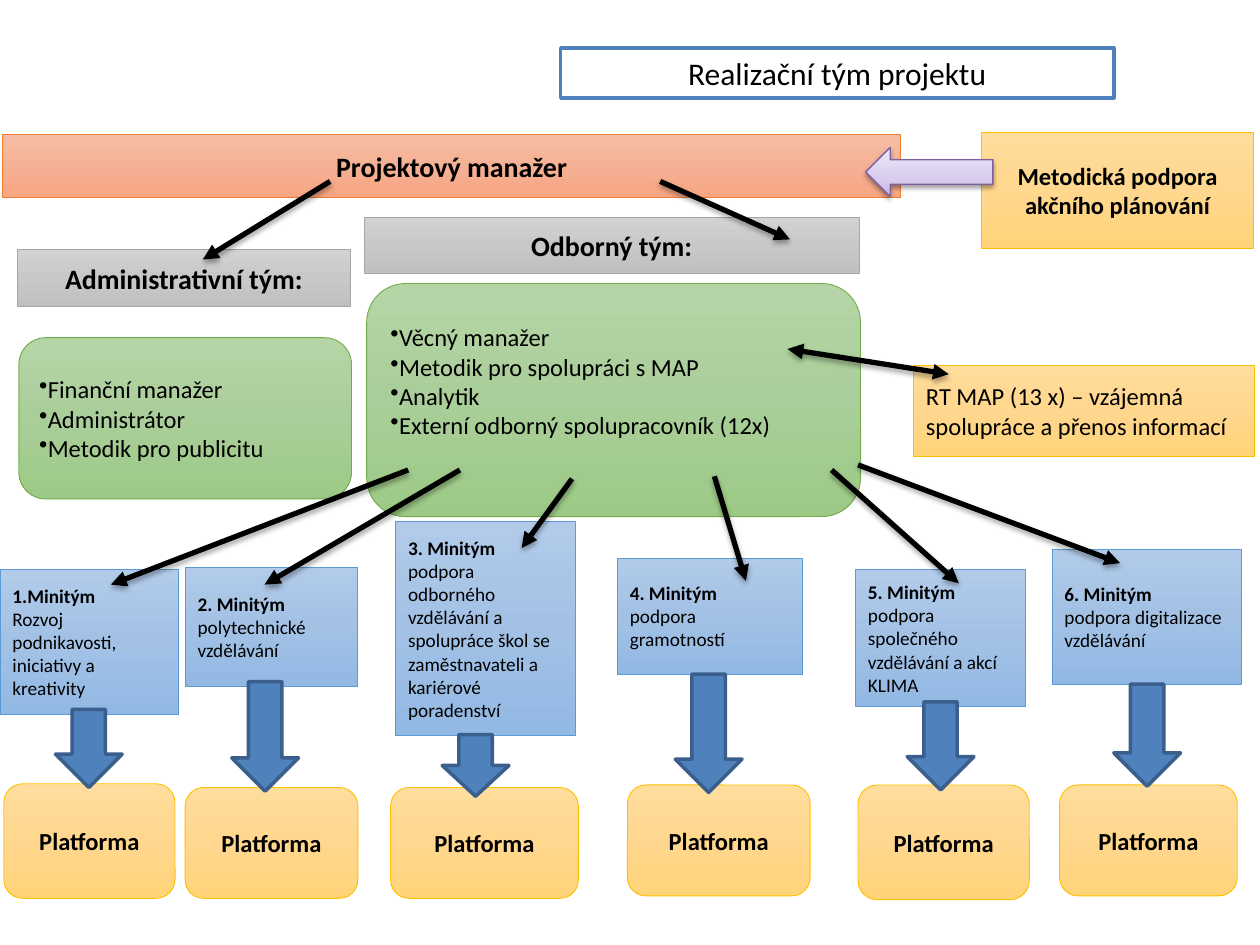
from dataclasses import dataclass
from typing import NamedTuple

from lxml.etree import SubElement
from pptx import Presentation
from pptx.dml.color import RGBColor
from pptx.enum.shapes import MSO_CONNECTOR, MSO_SHAPE as Preset
from pptx.enum.text import MSO_ANCHOR, PP_ALIGN as Align
from pptx.oxml.ns import qn
from pptx.util import Inches, Pt


class Paint(NamedTuple):
    stops: dict
    line: str
    width: float = 0.5
    angle: int = 90


@dataclass(frozen=True)
class Theme:
    font: str = "Calibri"
    ink: str = "000000"
    title: int = 18
    heading: int = 16
    body: int = 14
    small: int = 11
    orange: Paint = Paint({0: "F7BDA4", 50: "F5B195", 100: "F8A581"}, "ED7D31")
    green: Paint = Paint({0: "B5D5A7", 50: "AACE99", 100: "9CCA86"}, "70AD47")
    grey: Paint = Paint({0: "D2D2D2", 50: "C8C8C8", 100: "C0C0C0"}, "A5A5A5")
    gold: Paint = Paint({0: "FFDD9C", 50: "FFD78E", 100: "FFD479"}, "FFC000")
    sky: Paint = Paint({0: "B1CBE9", 50: "A3C1E5", 100: "92B9E4"}, "5B9BD5")
    purple: Paint = Paint({0: "C9B5E8", 35: "D8CBEE", 100: "F0EAF9"}, "7D60A0", 0.75, 270)
    blue: Paint = Paint({0: "4F81BD"}, "3A5F8C", 2)
    white: Paint = Paint({0: "FFFFFF"}, "4F81BD", 2)


class Team(NamedTuple):
    """Places of one small team, its platform and the arrows between them."""
    name: str
    topic: str
    box: tuple
    link: tuple
    platform: tuple
    arrow: tuple  # left, top, height


THEME = Theme()
COLUMNS, ROWS = 100, 75
CELL = Inches(0.1)
ARROW_WIDTH = 5.3

TEAMS = [
    Team("1.Minitým", "Rozvoj podnikavosti, iniciativy a kreativity",
         (0, 45.2, 14.2, 11.5), (32.4, 37.3, 8.8, 46.4),
         (0.3, 62.2, 13.6, 9.1), (4.4, 56.3, 6.2)),
    Team("2. Minitým", "polytechnické vzdělávání",
         (14.7, 45, 13.7, 9.5), (36.5, 37.3, 21, 46.4),
         (14.7, 62.5, 13.7, 8.8), (18.4, 54.1, 8.7)),
    Team("3. Minitým", "podpora odborného vzdělávání a spolupráce škol se "
         "zaměstnavateli a kariérové poradenství",
         (31.4, 41.4, 14.3, 17), (45.4, 38, 41.4, 43.5),
         (31, 62.5, 14.9, 8.8), (35.1, 58.3, 4.9)),
    Team("4. Minitým", "podpora gramotností",
         (49, 44.3, 14.7, 9.2), (56.7, 37.8, 59.2, 46.1),
         (49.8, 62.3, 14.5, 8.8), (53.6, 53.5, 9.4)),
    Team("5. Minitým", "podpora společného vzdělávání a akcí KLIMA",
         (67.9, 45.2, 13.5, 10.9), (66, 37.3, 76.1, 46.3),
         (68.1, 62.3, 13.6, 9.1), (72, 55.7, 7)),
    Team("6. Minitým", "podpora digitalizace vzdělávání",
         (83.5, 43.6, 15, 10.7), (68.1, 36.9, 88.9, 44.7),
         (84.1, 62.3, 14.1, 8.8), (88.4, 54.3, 8.1)),
]


def grid(places):
    return [round(place * CELL) for place in places]


def color(value):
    return RGBColor.from_string(value)


def fill_gradient(shape, paint):
    shape.fill.background()
    properties = shape._element.spPr
    gradient = SubElement(properties, qn("a:gradFill"), rotWithShape="1")
    stops = SubElement(gradient, qn("a:gsLst"))
    for position, value in paint.stops.items():
        stop = SubElement(stops, qn("a:gs"), pos=str(position * 1000))
        SubElement(stop, qn("a:srgbClr"), val=value)
    SubElement(gradient, qn("a:lin"), ang=str(paint.angle * 60000), scaled="0")
    properties.replace(properties.find(qn("a:noFill")), gradient)


def add_shadow(properties, opacity, distance):
    effects = properties.find(qn("a:effectLst"))
    if effects is None:
        effects = SubElement(properties, qn("a:effectLst"))
    shadow = SubElement(effects, qn("a:outerShdw"), blurRad=str(Pt(3.1)),
                        dist=str(Pt(distance)), dir="5400000", rotWithShape="0")
    tint = SubElement(shadow, qn("a:srgbClr"), val=THEME.ink)
    SubElement(tint, qn("a:alpha"), val=str(opacity * 1000))


def add_block(slide, preset, place, paint):
    shape = slide.shapes.add_shape(preset, *grid(place))
    shape.shadow.inherit = False
    if len(paint.stops) > 1:
        fill_gradient(shape, paint)
    else:
        shape.fill.solid()
        shape.fill.fore_color.rgb = color(paint.stops[0])
    shape.line.color.rgb = color(paint.line)
    shape.line.width = Pt(paint.width)
    return shape


def write(shape, lines, size, align=Align.LEFT, bold=(), bullet=False):
    """Write one paragraph per line; bold holds the indexes of bold lines."""
    frame = shape.text_frame
    frame.word_wrap = True
    frame.vertical_anchor = MSO_ANCHOR.MIDDLE
    for index, line in enumerate(lines):
        paragraph = frame.add_paragraph() if index else frame.paragraphs[0]
        paragraph.alignment = align
        if bullet:
            SubElement(paragraph._p.get_or_add_pPr(), qn("a:buChar"), char="•")
        run = paragraph.add_run()
        run.text = line
        formats = {"name": THEME.font, "size": Pt(size), "bold": index in bold}
        for name, value in formats.items():
            setattr(run.font, name, value)
        run.font.color.rgb = color(THEME.ink)


def add_label(slide, place, paint, text, size, preset=Preset.RECTANGLE, bold=(0,)):
    write(add_block(slide, preset, place, paint), [text], size, Align.CENTER, bold)


def add_list(slide, place, lines, bottom=0.05):
    shape = add_block(slide, Preset.ROUNDED_RECTANGLE, place, THEME.green)
    shape.text_frame.margin_bottom = Inches(bottom)
    write(shape, lines, THEME.body, bullet=True)


def add_link(slide, ends, both_ways=False):
    link = slide.shapes.add_connector(MSO_CONNECTOR.STRAIGHT, *grid(ends))
    link.line.color.rgb = color(THEME.ink)
    link.line.width = Pt(3)
    line = link.line._get_or_add_ln()
    if both_ways:
        SubElement(line, qn("a:headEnd"), type="triangle")
    SubElement(line, qn("a:tailEnd"), type="triangle")
    add_shadow(link._element.spPr, 35, 1.8)


def add_management(slide):
    add_label(slide, (0.2, 10.7, 71.3, 5), THEME.orange, "Projektový manažer", THEME.heading)
    add_list(slide, (1.5, 26.8, 26.4, 12.8),
             ["Finanční manažer", "Administrátor", "Metodik pro publicitu"])
    add_label(slide, (1.4, 19.8, 26.4, 4.5), THEME.grey, "Administrativní tým:", THEME.heading)
    add_label(slide, (28.9, 17.3, 39.3, 4.4), THEME.grey, "Odborný tým:", THEME.heading)
    add_list(slide, (29.1, 22.5, 39.2, 18.5),
             ["Věcný manažer", "Metodik pro spolupráci s MAP", "Analytik",
              "Externí odborný spolupracovník (12x)"], bottom=0.35)
    partner = add_block(slide, Preset.RECTANGLE, (72.5, 29, 27.1, 7.2), THEME.gold)
    write(partner, ["RT MAP (13 x) – vzájemná spolupráce a přenos informací"], THEME.body)
    add_link(slide, (62.5, 27.7, 75.3, 29.7), both_ways=True)
    add_link(slide, (26.2, 14.4, 16.1, 20.6))
    add_link(slide, (52.4, 14.4, 62.7, 19))


def add_teams(slide):
    for team in TEAMS:
        box = add_block(slide, Preset.RECTANGLE, team.box, THEME.sky)
        write(box, [team.name, team.topic], THEME.small, bold=(0,))
    for team in TEAMS:
        add_link(slide, team.link)
        add_label(slide, team.platform, THEME.gold, "Platforma", THEME.body,
                  Preset.ROUNDED_RECTANGLE)
        left, top, height = team.arrow
        add_block(slide, Preset.DOWN_ARROW, (left, top, ARROW_WIDTH, height), THEME.blue)


def add_support(slide):
    add_label(slide, (77.9, 10.5, 21.6, 9.2), THEME.gold,
              "Metodická podpora akčního plánování", THEME.body)
    arrow = add_block(slide, Preset.LEFT_ARROW, (68.7, 11.7, 10.1, 3.9), THEME.purple)
    add_shadow(arrow._element.spPr, 38, 1.6)


def main():
    presentation = Presentation()
    presentation.slide_width, presentation.slide_height = grid((COLUMNS, ROWS))
    slide = presentation.slides.add_slide(presentation.slide_layouts[6])
    add_management(slide)
    add_teams(slide)
    add_support(slide)
    add_label(slide, (44.5, 3.8, 43.9, 4), THEME.white, "Realizační tým projektu",
              THEME.title, bold=())
    presentation.save("out.pptx")


if __name__ == "__main__":
    main()
